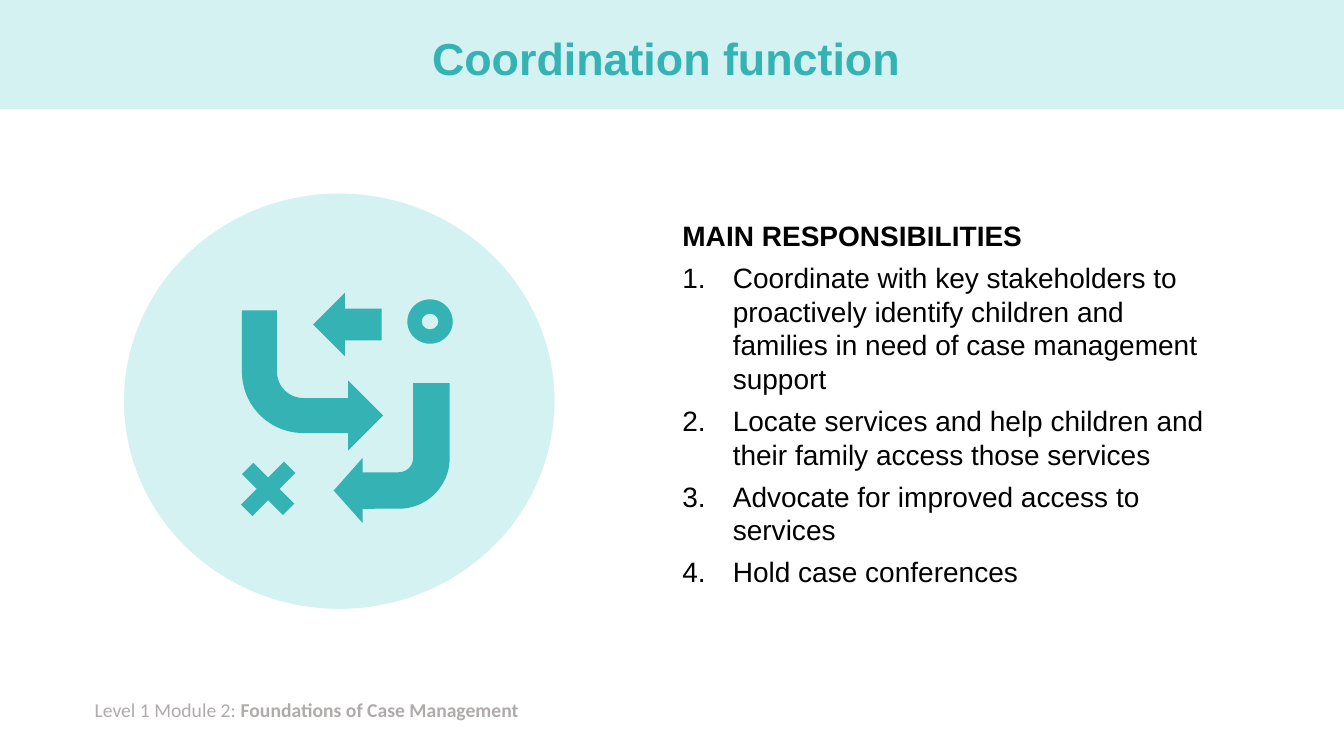
from dataclasses import dataclass

from lxml import etree
from pptx import Presentation
from pptx.dml.color import RGBColor
from pptx.enum import shapes, text
from pptx.oxml import ns
from pptx.util import Inches, Pt

SHAPE = shapes.MSO_SHAPE


@dataclass(frozen=True)
class Theme:
    pale: str = "D4F2F2"
    teal: str = "35B2B4"
    ink: str = "000000"
    grey: str = "AFABAB"
    font: str = "Arial"
    footer_font: str = "Calibri"
    title_size: int = 32
    body_size: int = 20
    footer_size: int = 14


THEME = Theme()
RESPONSIBILITIES = [
    "Coordinate with key stakeholders to proactively identify children and "
    "families in need of case management support",
    "Locate services and help children and their family access those services",
    "Advocate for improved access to services",
    "Hold case conferences",
]


def add_span(para, words, size, color, font=THEME.font, bold=False):
    span = para.add_run()
    span.text = words
    span.font.name = font
    span.font.size = Pt(size)
    span.font.bold = bold
    span.font.color.rgb = RGBColor.from_string(color)


def add_solid(parent, kind, box, color, adjustments=(), rotation=0):
    """Add a borderless filled shape; box is left, top, width, height in inches."""
    shape = parent.add_shape(kind, *map(Inches, box))
    shape.shadow.inherit = False
    shape.fill.solid()
    shape.fill.fore_color.rgb = RGBColor.from_string(color)
    shape.line.fill.background()
    shape.rotation = rotation
    for index, value in enumerate(adjustments):
        shape.adjustments[index] = value
    return shape


def add_text_frame(page, box):
    frame = page.shapes.add_textbox(*map(Inches, box)).text_frame
    frame.word_wrap = True
    frame.auto_size = text.MSO_AUTO_SIZE.SHAPE_TO_FIT_TEXT
    return frame


def number_paragraph(para, indent):
    """Give the paragraph automatic 1. 2. 3. numbering with a hanging indent."""
    props = para._p.get_or_add_pPr()
    props.set("marL", str(Inches(indent)))
    props.set("indent", str(Inches(-indent)))
    etree.SubElement(props, ns.qn("a:buFont"), typeface="+mj-lt")
    etree.SubElement(props, ns.qn("a:buAutoNum"), type="arabicPeriod")


def add_header(page, box):
    left, top, width, height = box
    band = add_solid(page.shapes, SHAPE.RECTANGLE, box, THEME.pale)
    title = page.shapes.title
    title.element.addprevious(band.element)
    title.left, title.top = Inches(left + 0.92), Inches(top + 0.13)
    title.width, title.height = Inches(11.5), Inches(height - 0.13)
    frame = title.text_frame
    frame.vertical_anchor = text.MSO_ANCHOR.MIDDLE
    frame.auto_size = text.MSO_AUTO_SIZE.NONE
    para = frame.paragraphs[0]
    para.alignment = text.PP_ALIGN.CENTER
    para.line_spacing = 0.9
    add_span(para, "Coordination function ", THEME.title_size, THEME.teal, bold=True)


def add_responsibilities(page, box):
    frame = add_text_frame(page, box)
    heading = frame.paragraphs[0]
    heading.space_after = Pt(6)
    add_span(heading, "MAIN RESPONSIBILITIES", THEME.body_size, THEME.ink, bold=True)
    for duty in RESPONSIBILITIES:
        para = frame.add_paragraph()
        para.space_after = Pt(6)
        number_paragraph(para, 0.5)
        add_span(para, duty, THEME.body_size, THEME.ink)


def add_strategy_icon(page, box):
    """Draw the disc with arrows, cross and ring as one group."""
    left, top, _, _ = box
    icon = page.shapes.add_group_shape().shapes
    add_solid(icon, SHAPE.OVAL, box, THEME.pale)

    def add_mark(kind, x, y, width, height, adjustments=(), rotation=0):
        place = (left + x, top + y, width, height)
        return add_solid(icon, kind, place, THEME.teal, adjustments, rotation)

    add_mark(SHAPE.DOWN_ARROW, 1.9, 0.96, 0.63, 0.68, rotation=90)
    right_turn = add_mark(SHAPE.BENT_ARROW, 1.17, 1.16, 1.4, 1.39)
    right_turn.element.spPr.find(ns.qn("a:xfrm")).set("flipV", "1")
    add_mark(SHAPE.BENT_ARROW, 2.08, 1.88, 1.15, 1.39,
             (0.315, 0.282, 0.25, 0.438), rotation=180)
    add_mark(SHAPE.MATH_PLUS, 1.04, 2.52, 0.78, 0.82, (0.204,), rotation=45)
    add_mark(SHAPE.DONUT, 2.81, 1.05, 0.45, 0.44, (0.322,))


def add_footer(page, box):
    para = add_text_frame(page, box).paragraphs[0]
    for words, bold in (("Level 1 Module 2: ", False),
                        ("Foundations of Case Management", True)):
        add_span(para, words, THEME.footer_size, THEME.grey, THEME.footer_font, bold)


def main():
    deck = Presentation()
    deck.slide_width, deck.slide_height = Inches(13.33), Inches(7.5)
    page = deck.slides.add_slide(deck.slide_layouts.get_by_name("Title Only"))
    add_header(page, (0, 0, 13.33, 1.08))
    add_footer(page, (0.84, 6.87, 4.55, 0.34))
    add_responsibilities(page, (6.67, 2.12, 5.44, 3.8))
    add_strategy_icon(page, (1.23, 1.92, 4.27, 4.12))
    deck.save("out.pptx")


if __name__ == "__main__":
    main()
